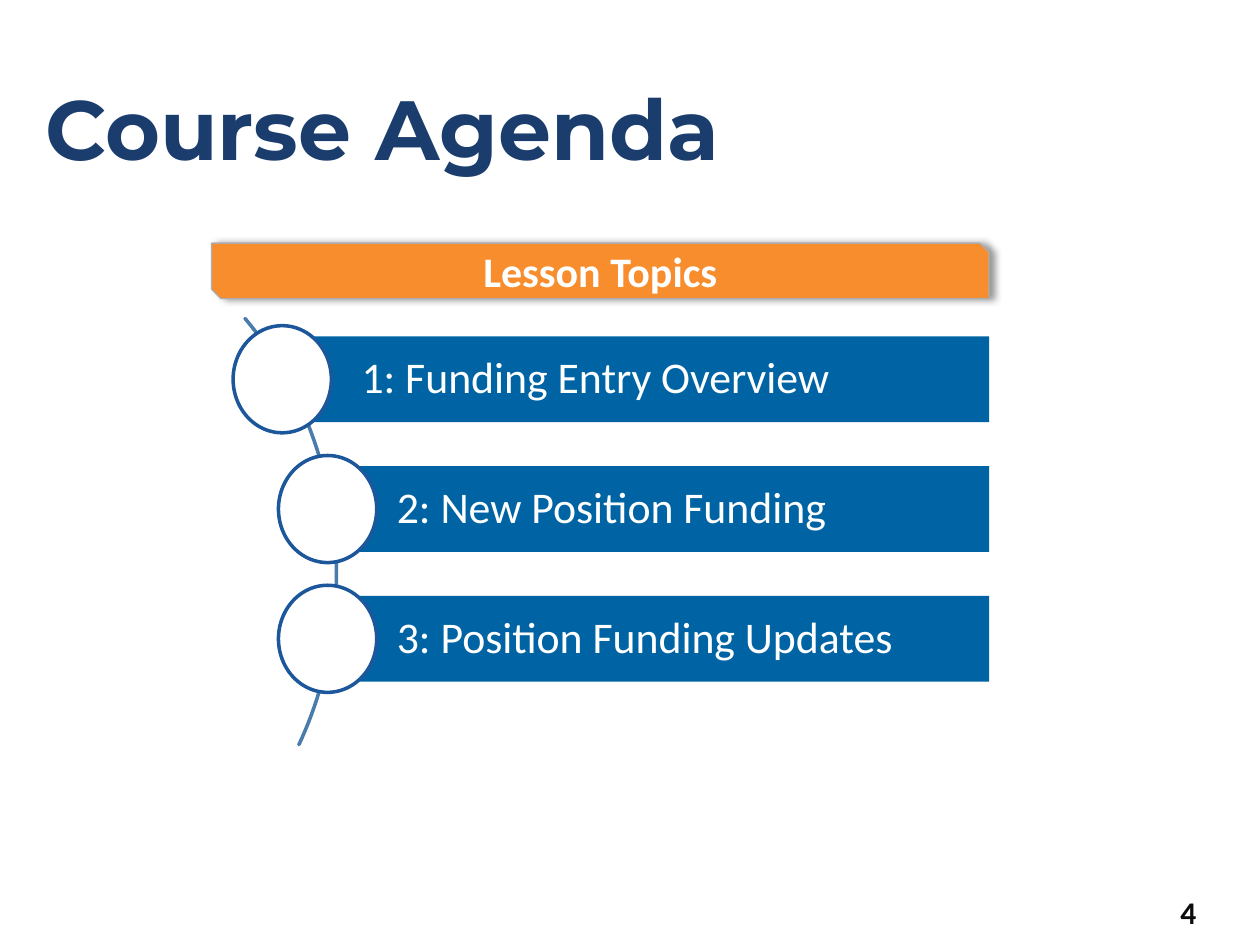
from lxml import etree
from pptx import Presentation
from pptx.dml.color import RGBColor
from pptx.enum.shapes import MSO_SHAPE
from pptx.enum.text import MSO_ANCHOR, PP_ALIGN
from pptx.oxml.ns import qn
from pptx.util import Inches, Pt

ARC, OVAL = MSO_SHAPE.BLOCK_ARC, MSO_SHAPE.OVAL
RECT, SNIP = MSO_SHAPE.RECTANGLE, MSO_SHAPE.SNIP_2_DIAG_RECTANGLE
TOP, MIDDLE = MSO_ANCHOR.TOP, MSO_ANCHOR.MIDDLE
LEFT, CENTER = PP_ALIGN.LEFT, PP_ALIGN.CENTER

WHITE = RGBColor(0xFF, 0xFF, 0xFF)
NAVY = RGBColor(0x1B, 0x3D, 0x6D)
BLUE = RGBColor(0x00, 0x64, 0xA4)
ARC_BLUE = RGBColor(0x49, 0x7C, 0xAB)
RING_BLUE = RGBColor(0x1D, 0x57, 0x9B)
ORANGE = RGBColor(0xF7, 0x8D, 0x2D)
GRAY = RGBColor(0xAF, 0xAB, 0xAB)
BLACK = RGBColor(0x0D, 0x0D, 0x0D)

# Content: topic, left edge of its bar, left inset of its text
TITLE = "Course Agenda"
HEADING = "Lesson Topics"
TOPICS = [
    ("1: Funding Entry Overview", 2.25, 0.62),
    ("2: New Position Funding", 2.61, 0.54),
    ("3: Position Funding Updates", 2.61, 0.54),
]
PAGE = "4"

TITLE_FONT = dict(name="Montserrat", size=Pt(48), bold=True)
HEADING_FONT = dict(name="Calibri", size=Pt(24), bold=True)
TOPIC_FONT = dict(name="Calibri", size=Pt(25), bold=False)
PAGE_FONT = dict(name="Calibri", size=Pt(18), bold=True)

# Layout in inches
RIGHT = 7.85
BAR_TOP, BAR_H, PITCH = 2.67, 0.68, 1.03
RING_W, RING_H = 0.78, 0.85


def add_shape(kind, box, fill, line=None, width=0):
    sp = s.shapes.add_shape(kind, *map(Inches, box))
    sp.shadow.inherit = False
    sp.fill.solid()
    sp.fill.fore_color.rgb = fill
    if line is None:
        sp.line.fill.background()
    else:
        sp.line.color.rgb = line
        sp.line.width = Pt(width)
    return sp


def write(sp, text, font, color, align=LEFT, anchor=MIDDLE, inset=0.1):
    tf = sp.text_frame
    tf.word_wrap = True
    tf.vertical_anchor = anchor
    tf.margin_left = Inches(inset)
    p = tf.paragraphs[0]
    p.alignment = align
    r = p.add_run()
    r.text = text
    for name, value in font.items():
        setattr(r.font, name, value)
    r.font.color.rgb = color
    return p


def add_shadow(sp):
    effects = sp._element.spPr.find(qn("a:effectLst"))
    shadow = etree.SubElement(effects, qn("a:outerShdw"), blurRad=str(Pt(4)),
                              dist=str(Pt(3)), dir="0", algn="l", rotWithShape="0")
    color = etree.SubElement(shadow, qn("a:srgbClr"), val="000000")
    etree.SubElement(color, qn("a:alpha"), val="40000")


def add_text(box, text, font, color, anchor):
    write(s.shapes.add_textbox(*map(Inches, box)), text, font, color, anchor=anchor)


prs = Presentation()
prs.slide_width, prs.slide_height = Inches(10), Inches(7.5)
s = prs.slides.add_slide(prs.slide_layouts[6])

# Page number
add_text((9.27, 7.04, 0.6, 0.4), PAGE, PAGE_FONT, BLACK, TOP)

# Arc behind the topics
arc = add_shape(ARC, (-2.83, 1.56, 5.5, 5.99), BLUE, ARC_BLUE, 2)
for i, value in enumerate((189, 17.34, 0)):
    arc.adjustments[i] = value

# Topic bars, each with a ring over its left end
for i, (topic, left, inset) in enumerate(TOPICS):
    top = BAR_TOP + i * PITCH
    bar = add_shape(RECT, (left, top, RIGHT - left, BAR_H), BLUE)
    p = write(bar, topic, TOPIC_FONT, WHITE, inset=inset)
    p.line_spacing = 0.9
    add_shape(OVAL, (left - 0.4, top + (BAR_H - RING_H) / 2, RING_W, RING_H),
              WHITE, RING_BLUE, 2)

# Heading
heading = add_shape(SNIP, (1.68, 1.93, RIGHT - 1.68, 0.44), ORANGE, GRAY, 0.75)
add_shadow(heading)
write(heading, HEADING, HEADING_FONT, WHITE, align=CENTER)

# Title
add_text((0.26, 0.54, 9, 0.93), TITLE, TITLE_FONT, NAVY, MIDDLE)

prs.save("out.pptx")
